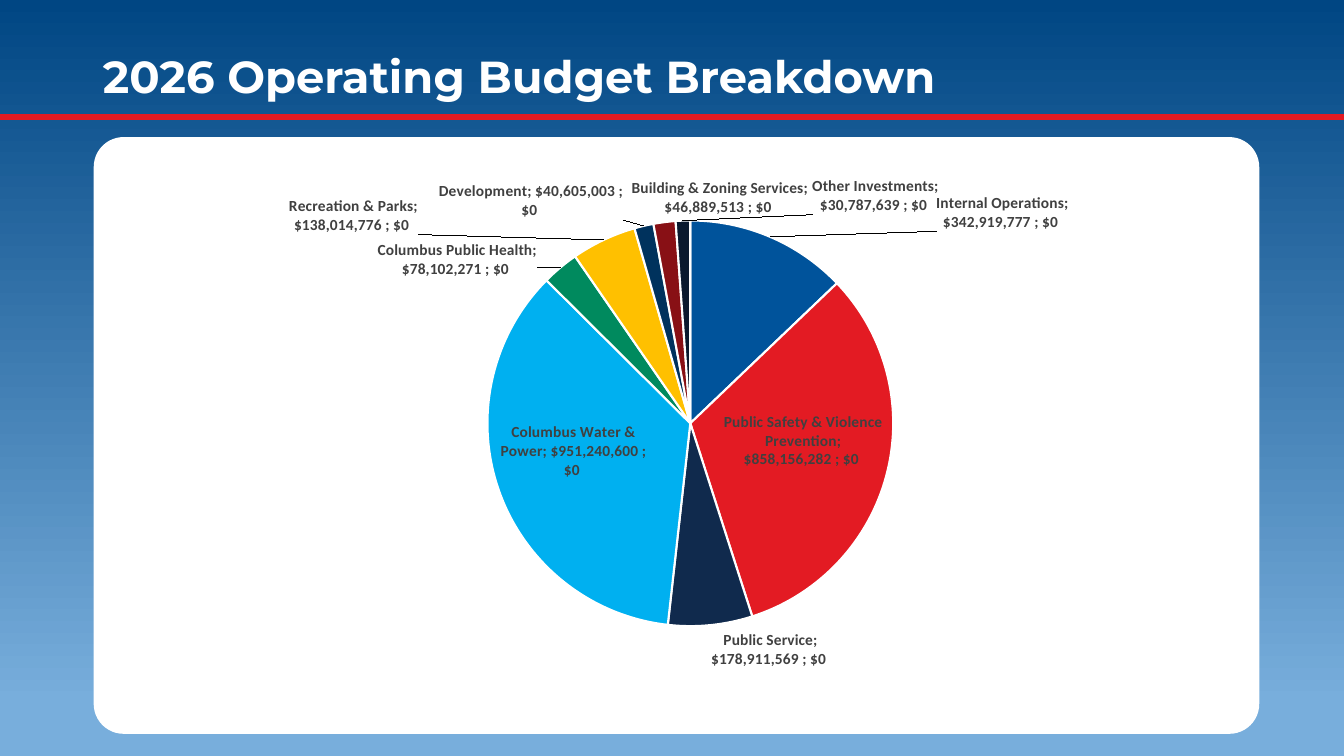
from copy import deepcopy
from dataclasses import dataclass

from lxml import etree
from pptx import Presentation
from pptx.chart.data import CategoryChartData
from pptx.dml.color import RGBColor
from pptx.enum.chart import XL_CHART_TYPE as ChartType, XL_LABEL_POSITION as LabelPosition
from pptx.enum.shapes import MSO_CONNECTOR as Connector, MSO_SHAPE as Shape
from pptx.enum.text import MSO_ANCHOR as Anchor, PP_ALIGN as Align
from pptx.oxml import parse_xml
from pptx.oxml.ns import nsdecls, qn
from pptx.util import Inches, Pt


@dataclass(frozen=True)
class Theme:
    sky: str = "78AEDC"
    navy: str = "004683"
    red: str = "E31B23"
    white: str = "FFFFFF"
    ink: str = "000000"
    label: str = "404040"
    heading_font: str = "Montserrat"
    chart_font: str = "Calibri"
    title_size: int = 32
    chart_size: int = 10
    label_size: int = 11
    rule_width: float = 4.5
    slice_border: float = 1.5


MONEY = '"$"#,##0_);[Red]\\("$"#,##0\\)'

# Department, budget, slice colour, label shift as fractions of the chart
BUDGET = [
    ("Internal Operations", 342919777, "00539B", (0.17, 0)),
    ("Public Safety & Violence Prevention", 858156282, "E31B23", None),
    ("Public Service", 178911569, "102A4D", None),
    ("Columbus Water & Power", 951240600, "00B0F0", None),
    ("Columbus Public Health", 78102271, "008A5E", (-0.02, 0.03)),
    ("Recreation & Parks", 138014776, "FFC000", (-0.19, 0)),
    ("Development", 40605003, "00325D", (-0.02, 0)),
    ("Building & Zoning Services", 46889513, "881015", (0.15, 0)),
    ("Other Investments", 30787639, "0A192E", (0.2, 0)),
]


def set_all(target, values):
    for name, value in values.items():
        setattr(target, name, value)


def manual_layout(**values):
    """Chart layout element; each keyword becomes a child, in order."""
    layout = parse_xml(f"<c:layout {nsdecls('c')}><c:manualLayout/></c:layout>")
    for name, value in values.items():
        etree.SubElement(layout[0], qn(f"c:{name}")).set("val", str(value))
    return layout


class BudgetSlide:
    def __init__(self, deck, theme):
        self.theme = theme
        self.page = deck.slides.add_slide(deck.slide_layouts[5])

    def set_font(self, font, name, size, color, bold):
        set_all(font, {"name": name, "size": Pt(size), "bold": bold})
        font.color.rgb = RGBColor.from_string(color)

    def background(self):
        fill = self.page.background.fill
        fill.gradient()
        fill.gradient_angle = 90
        stops = ((0.07, self.theme.sky), (1, self.theme.navy))
        for stop, (position, color) in zip(fill.gradient_stops, stops):
            stop.position = position
            stop.color.rgb = RGBColor.from_string(color)

    def rule(self, top, width):
        line = self.page.shapes.add_connector(
            Connector.STRAIGHT, 0, Inches(top), Inches(width), Inches(top))
        line.line.color.rgb = RGBColor.from_string(self.theme.red)
        line.line.width = Pt(self.theme.rule_width)
        etree.SubElement(line._element.spPr, qn("a:effectLst"))

    def title(self, text, left, top, width, height):
        box = self.page.shapes.title
        set_all(box, {"left": Inches(left), "top": Inches(top),
                      "width": Inches(width), "height": Inches(height)})
        set_all(box.text_frame, {"text": text, "vertical_anchor": Anchor.MIDDLE,
                                 "word_wrap": True})
        para = box.text_frame.paragraphs[0]
        set_all(para, {"alignment": Align.LEFT, "line_spacing": 0.9})
        self.set_font(para.runs[0].font, self.theme.heading_font,
                      self.theme.title_size, self.theme.white, True)

    def panel(self, left, top, width, height):
        card = self.page.shapes.add_shape(
            Shape.ROUNDED_RECTANGLE, *map(Inches, (left, top, width, height)))
        card.adjustments[0] = 0.05
        card.shadow.inherit = False
        card.fill.solid()
        card.fill.fore_color.rgb = RGBColor.from_string(self.theme.white)
        card.line.fill.background()

    def pie(self, rows, left, top, width, height):
        data = CategoryChartData(number_format=MONEY)
        data.categories = [row[0] for row in rows]
        data.add_series("Series 1", [row[1] for row in rows])
        chart = self.page.shapes.add_chart(
            ChartType.PIE, *map(Inches, (left, top, width, height)), data).chart
        set_all(chart, {"has_title": False, "has_legend": False})
        self.set_font(chart.font, self.theme.chart_font, self.theme.chart_size,
                      self.theme.ink, False)
        self.place_plot(chart)

        plot = chart.plots[0]
        plot.vary_by_categories = True
        series = plot.series[0]
        for index, (_, _, color, _) in enumerate(rows):
            piece = series.points[index].format
            piece.fill.solid()
            piece.fill.fore_color.rgb = RGBColor.from_string(color)
            piece.line.color.rgb = RGBColor.from_string(self.theme.white)
            piece.line.width = Pt(self.theme.slice_border)
        self.slice_labels(series.data_labels, [row[3] for row in rows])

    def place_plot(self, chart):
        area = chart._chartSpace.find(".//" + qn("c:plotArea"))
        for layout in area.findall(qn("c:layout")):
            area.remove(layout)
        area.insert(0, manual_layout(layoutTarget="inner", xMode="edge", yMode="edge",
                                     x=0.308, y=0.113, w=0.421, h=0.776))

    def slice_labels(self, labels, shifts):
        """Format all labels, then give each shifted one its own entry."""
        set_all(labels, {"show_value": True, "show_percentage": True,
                         "show_category_name": True, "number_format": MONEY,
                         "number_format_is_linked": False,
                         "position": LabelPosition.BEST_FIT})
        self.set_font(labels.font, self.theme.chart_font, self.theme.label_size,
                      self.theme.label, True)
        root = labels._element
        for leader in root.findall(qn("c:showLeaderLines")):
            root.remove(leader)
        etree.SubElement(root, qn("c:separator")).text = "; "
        shared = list(root)
        etree.SubElement(root, qn("c:showLeaderLines")).set("val", "1")

        entries = []
        for index, shift in enumerate(shifts):
            if shift:
                entry = etree.Element(qn("c:dLbl"))
                etree.SubElement(entry, qn("c:idx")).set("val", str(index))
                entry.append(manual_layout(x=shift[0], y=shift[1]))
                entry.extend(deepcopy(shared))
                entries.append(entry)
        root[:0] = entries


def main():
    deck = Presentation()
    set_all(deck, {"slide_width": Inches(13.33), "slide_height": Inches(7.5)})
    slide = BudgetSlide(deck, Theme())
    slide.background()
    slide.rule(1.16, 13.33)
    slide.title("2026 Operating Budget Breakdown", 0.92, 0.4, 11.5, 0.76)
    slide.panel(0.93, 1.36, 11.56, 5.92)
    slide.pie(BUDGET, 1.89, 1.6, 9.56, 5.19)
    deck.save("out.pptx")


if __name__ == "__main__":
    main()
